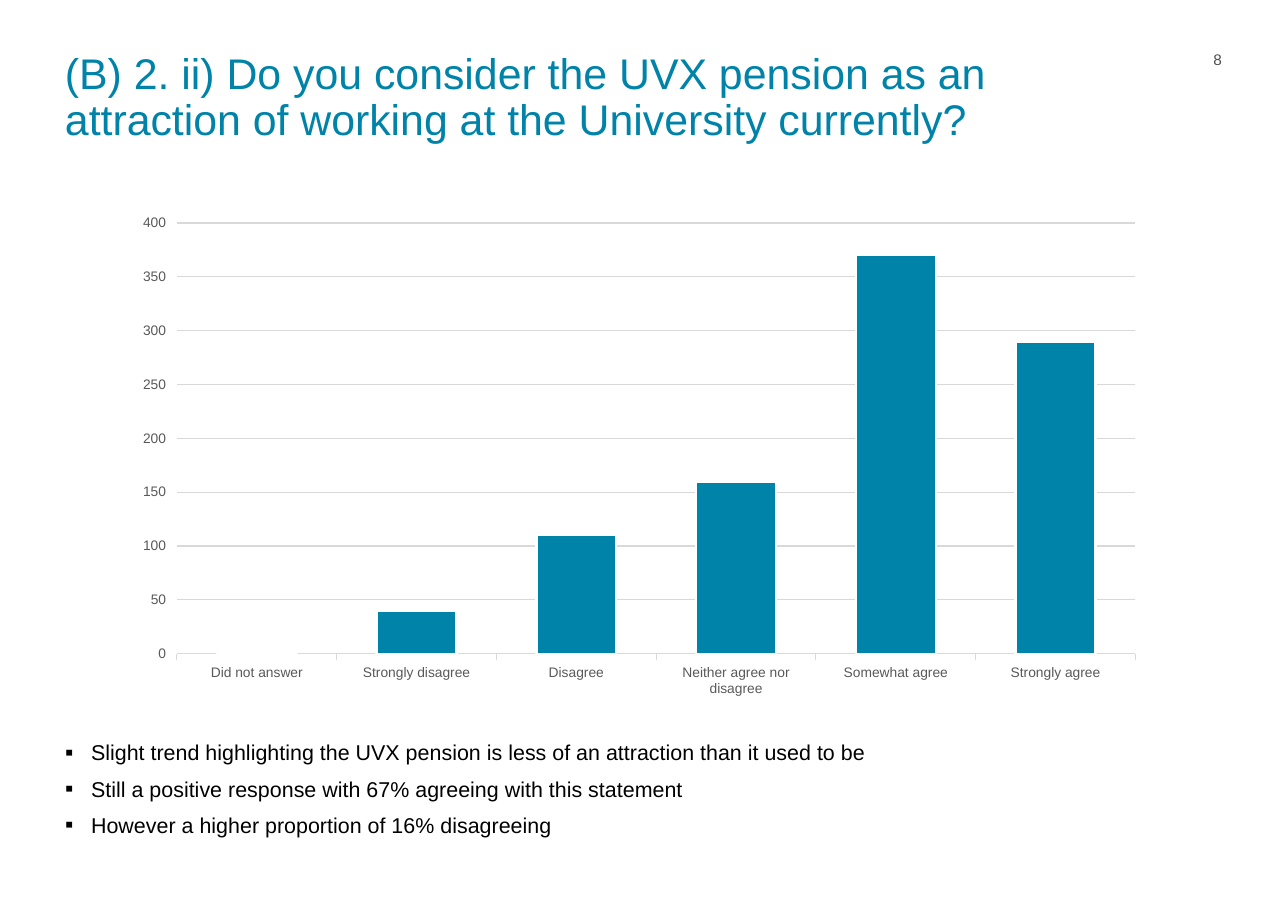
from lxml.etree import SubElement
from pptx import Presentation
from pptx.chart.data import CategoryChartData
from pptx.dml.color import RGBColor
from pptx.enum.chart import XL_CHART_TYPE as Chart, XL_TICK_MARK as Tick
from pptx.enum.text import PP_ALIGN as Align
from pptx.oxml.ns import qn
from pptx.util import Pt

FONT = "Arial"
COLORS = {
    "teal": "0083A9", "black": "000000", "white": "FFFFFF",
    "slate": "4D4F53", "label": "595959", "grid": "D9D9D9",
}
TITLE = ("(B) 2. ii) Do you consider the UVX pension as an attraction "
         "of working at the University currently?")
VOTES = {
    "Did not answer": 0,
    "Strongly disagree": 40,
    "Disagree": 110,
    "Neither agree nor disagree": 160,
    "Somewhat agree": 370,
    "Strongly agree": 290,
}
POINTS = [
    "Slight trend highlighting the UVX pension is less of an attraction than it used to be",
    "Still a positive response with 67% agreeing with this statement",
    "However a higher proportion of 16% disagreeing",
]


def color(name):
    return RGBColor.from_string(COLORS[name])


def set_font(font, size, name):
    font.name, font.size = FONT, Pt(size)
    font.color.rgb = color(name)


def set_line(line, name, width):
    line.color.rgb = color(name)
    line.width = Pt(width)


def add_bullet(para):
    props = para._p.get_or_add_pPr()
    props.set("marL", str(Pt(17)))
    props.set("indent", str(-Pt(17)))
    SubElement(props, qn("a:buSzPct"), val="110000")
    SubElement(props, qn("a:buFont"), typeface=FONT)
    SubElement(props, qn("a:buChar"), char="▪")


def add_text(slide, box, lines, size, name, space=0.9, align=Align.LEFT, bullet=False):
    """Add a text box without insets, one paragraph per line."""
    frame = slide.shapes.add_textbox(*map(Pt, box)).text_frame
    frame.word_wrap = True
    frame.margin_left = frame.margin_right = 0
    frame.margin_top = frame.margin_bottom = 0
    frame.text = "\n".join(lines)
    for index, para in enumerate(frame.paragraphs):
        if bullet:
            add_bullet(para)
        if index:
            para.space_before = Pt(6)
        para.line_spacing = space
        para.alignment = align
        set_font(para.font, size, name)


def add_votes(slide, box):
    data = CategoryChartData()
    data.categories = list(VOTES)
    data.add_series("Series 1", list(VOTES.values()))
    chart = slide.shapes.add_chart(Chart.COLUMN_CLUSTERED, *map(Pt, box), data).chart
    chart.has_legend = chart.has_title = False
    set_font(chart.font, 10, "black")

    plot = chart.plots[0]
    plot.gap_width = 100
    plot.vary_by_categories = False
    bars = plot.series[0].format
    bars.fill.solid()
    bars.fill.fore_color.rgb = color("teal")
    set_line(bars.line, "white", 1.5)

    cats, vals = chart.category_axis, chart.value_axis
    for axis in (cats, vals):
        axis.major_tick_mark = Tick.OUTSIDE
        axis.minor_tick_mark = Tick.NONE
        set_font(axis.tick_labels.font, 9, "label")
    set_line(cats.format.line, "grid", 0.75)
    vals.format.line.fill.background()
    vals.minimum_scale, vals.maximum_scale, vals.major_unit = 0, 400, 50
    vals.has_major_gridlines = True
    set_line(vals.major_gridlines.format.line, "grid", 0.75)


def main():
    deck = Presentation()
    deck.slide_width, deck.slide_height = Pt(841.68), Pt(595.44)
    slide = deck.slides.add_slide(deck.slide_layouts[6])
    add_text(slide, (42.5, 34, 628, 60), [TITLE], 28, "teal")
    add_text(slide, (770.5, 34.5, 28, 14), ["8"], 10, "slate", align=Align.RIGHT)
    add_votes(slide, (80, 134, 675.5, 328))
    add_text(slide, (42.5, 482.5, 757, 72), POINTS, 14, "black", space=1.05, bullet=True)
    deck.save("out.pptx")


if __name__ == "__main__":
    main()
